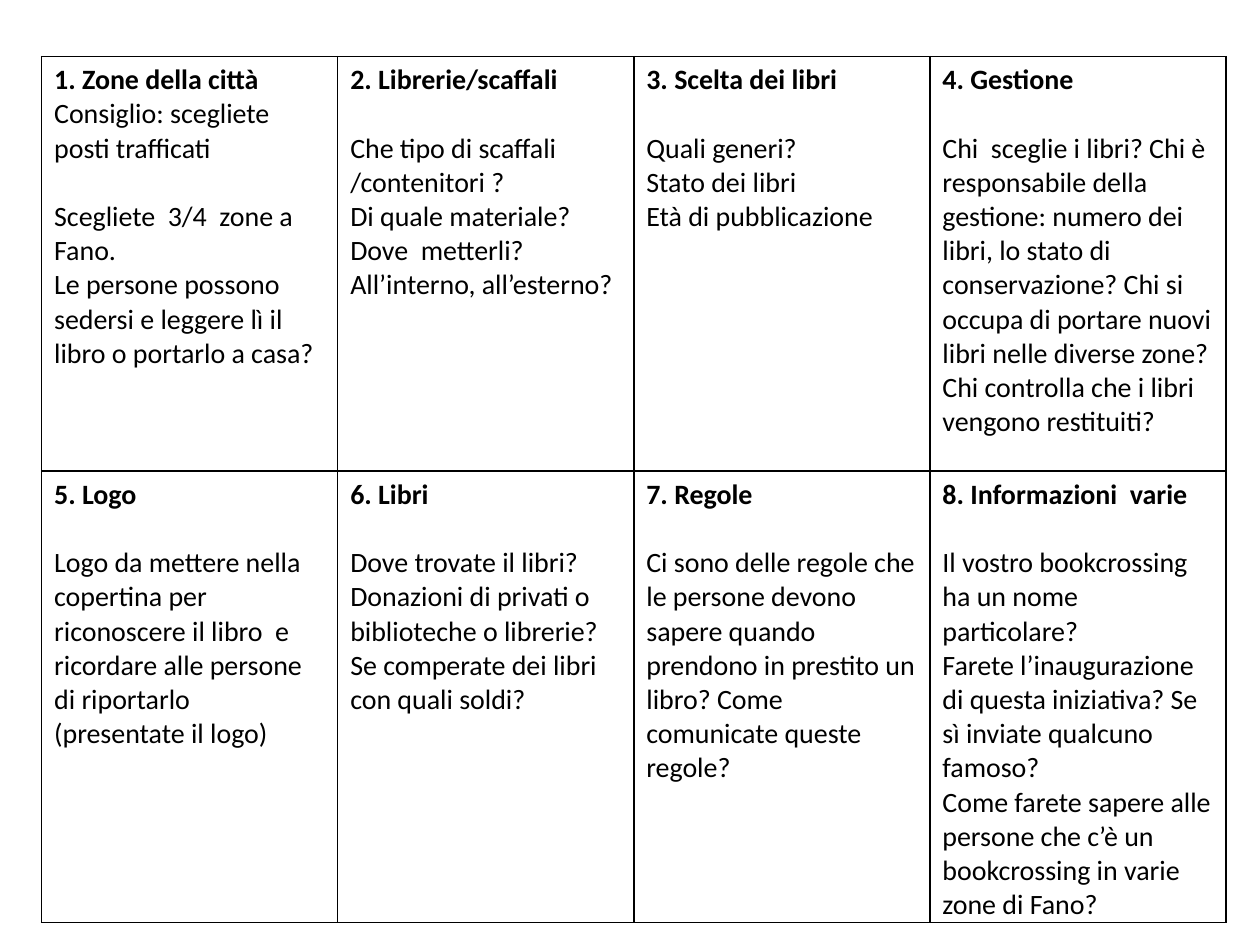
import pptx
import pptx.util
import pptx.dml.color
import pptx.oxml
import pptx.oxml.ns
from pptx.util import Inches

BLACK = pptx.dml.color.RGBColor(0, 0, 0)
FONT = "Calibri"
GAP = 19.5
COLS = 4

TOPICS = [
    ("1. Zone della città", [
        "Consiglio: scegliete posti trafficati",
        "Scegliete  3/4  zone a Fano.",
        "Le persone possono sedersi e leggere lì il libro o portarlo a casa?"]),
    ("2. Librerie/scaffali", [
        "Che tipo di scaffali /contenitori ?",
        "Di quale materiale? Dove  metterli? All’interno, all’esterno?"]),
    ("3. Scelta dei libri", [
        "Quali generi?", "Stato dei libri", "Età di pubblicazione"]),
    ("4. Gestione", [
        "Chi  sceglie i libri? Chi è responsabile della gestione: numero dei "
        "libri, lo stato di conservazione? Chi si occupa di portare nuovi libri "
        "nelle diverse zone? Chi controlla che i libri vengono restituiti?"]),
    ("5. Logo", [
        "Logo da mettere nella copertina per riconoscere il libro  e ricordare "
        "alle persone di riportarlo (presentate il logo)"]),
    ("6. Libri", [
        "Dove trovate il libri? Donazioni di privati o biblioteche o librerie?",
        "Se comperate dei libri con quali soldi?"]),
    ("7. Regole", [
        "Ci sono delle regole che le persone devono sapere quando prendono in "
        "prestito un libro? Come comunicate queste regole?"]),
    ("8. Informazioni  varie", [
        "Il vostro bookcrossing ha un nome particolare?",
        "Farete l’inaugurazione di questa iniziativa? Se sì inviate qualcuno famoso?",
        "Come farete sapere alle persone che c’è un bookcrossing in varie zone di Fano?"]),
]


def write(p, text, size=16, bold=False, color=BLACK, after=0):
    p.space_after = pptx.util.Pt(after)
    r = p.add_run()
    r.text = text
    r.font.name = FONT
    r.font.size = pptx.util.Pt(size)
    r.font.bold = bold
    r.font.color.rgb = color


def set_borders(cell, color=BLACK, width=1):
    tc_pr = cell._tc.get_or_add_tcPr()
    for i, side in enumerate(("lnL", "lnR", "lnT", "lnB")):
        tc_pr.insert(i, pptx.oxml.parse_xml(
            f'<a:{side} {pptx.oxml.ns.nsdecls("a")} w="{pptx.util.Pt(width)}">'
            f'<a:solidFill><a:srgbClr val="{color}"/></a:solidFill></a:{side}>'))


def fill_cell(cell, heading, lines, gap_line):
    cell.fill.background()
    cell.margin_bottom = 0
    set_borders(cell)
    tf = cell.text_frame
    for i, text in enumerate([heading] + lines):
        p = tf.add_paragraph() if i else tf.paragraphs[0]
        write(p, text, bold=i == 0, after=GAP if i == gap_line else 0)


def add_topic_table(s):
    rows = len(TOPICS) // COLS
    table = s.shapes.add_table(
        rows, COLS, Inches(0.33), Inches(0.45), Inches(9.4), Inches(6.86)).table
    table.first_row = False
    table.horz_banding = False
    for row, height in zip(table.rows, (3.29, 3.57)):
        row.height = Inches(height)
    for i, (heading, lines) in enumerate(TOPICS):
        fill_cell(table.cell(*divmod(i, COLS)), heading, lines,
                  gap_line=1 if i == 0 else 0)


def main():
    prs = pptx.Presentation()
    prs.slide_width, prs.slide_height = Inches(10), Inches(7.5)
    s = prs.slides.add_slide(prs.slide_layouts[6])
    add_topic_table(s)
    prs.save("out.pptx")


if __name__ == "__main__":
    main()
